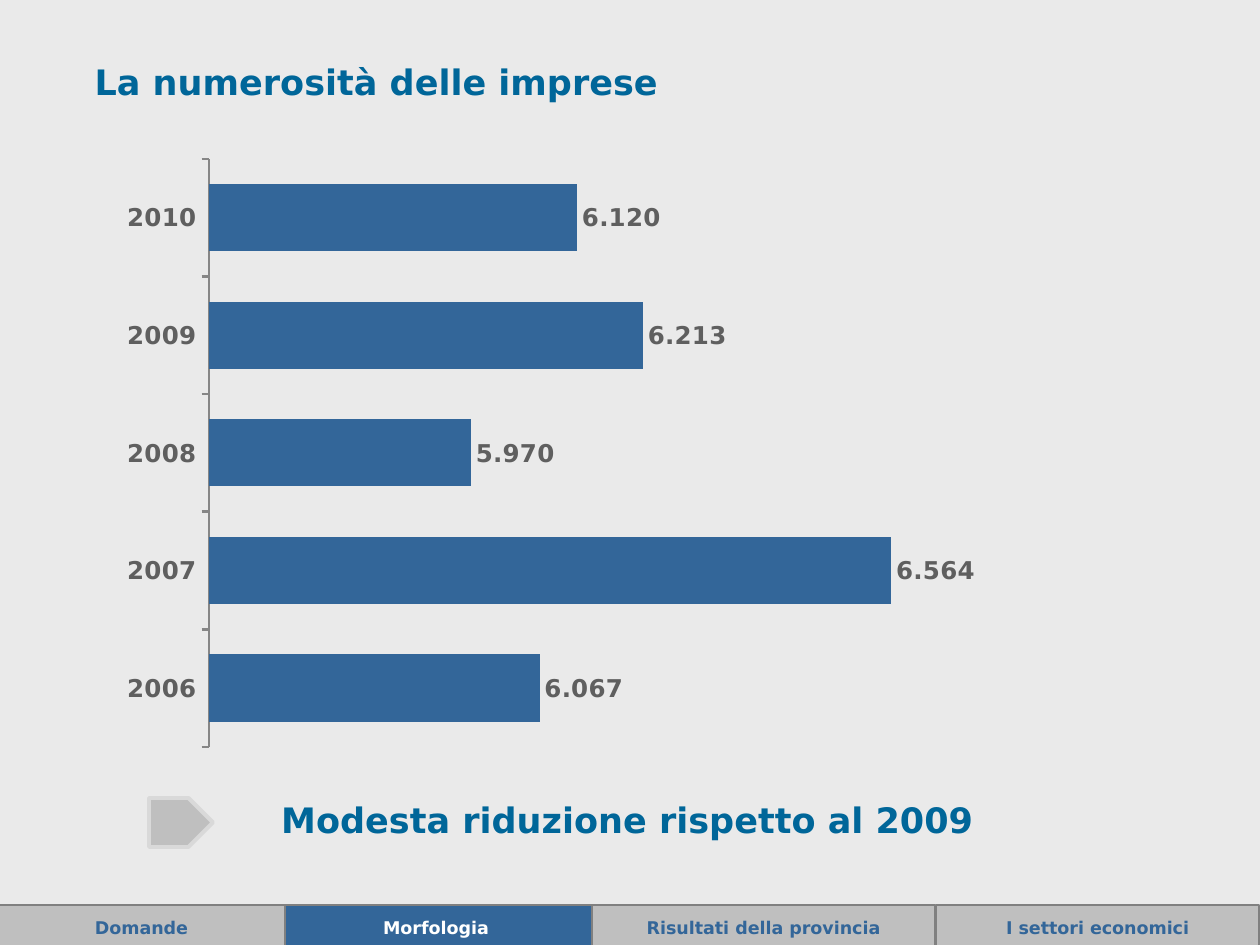
from pptx import Presentation
from pptx.chart.data import CategoryChartData
from pptx.dml.color import RGBColor
from pptx.enum.chart import XL_CHART_TYPE, XL_LABEL_POSITION, XL_TICK_MARK
from pptx.enum.shapes import MSO_SHAPE
from pptx.enum.text import MSO_ANCHOR, PP_ALIGN
from pptx.oxml import parse_xml
from pptx.oxml.ns import nsdecls
from pptx.util import Pt

BAR = XL_CHART_TYPE.BAR_CLUSTERED
OUT_END = XL_LABEL_POSITION.OUTSIDE_END
OUT, NONE = XL_TICK_MARK.OUTSIDE, XL_TICK_MARK.NONE
RECT, ARROW = MSO_SHAPE.RECTANGLE, MSO_SHAPE.PENTAGON
MIDDLE = MSO_ANCHOR.MIDDLE
LEFT, CENTER = PP_ALIGN.LEFT, PP_ALIGN.CENTER

THEME = {
    "font": "DejaVu Sans",
    "back": "EAEAEA", "head": "006699", "blue": "336699", "gray": "BFBFBF",
    "edge": "808080", "pale": "D9D9D9", "axis": "868686", "text": "5F5F5F",
    "white": "FFFFFF",
    "big": 20, "mid": 14, "small": 10,
}
SCALE = 914400 / 126  # EMU per px


def box(*sides):
    return [round(side * SCALE) for side in sides]


def style(font, size, color):
    font.name = THEME["font"]
    font.size = Pt(THEME[size])
    font.bold = True
    font.color.rgb = RGBColor.from_string(THEME[color])


prs = Presentation()
prs.slide_width, prs.slide_height = box(1260, 945)
slide = prs.slides.add_slide(prs.slide_layouts[5])
shapes = slide.shapes
fill = slide.background.fill
fill.solid()
fill.fore_color.rgb = RGBColor.from_string(THEME["back"])

# Title and closing message
title = shapes.title
title.left, title.top, title.width, title.height = box(82, 27, 1126, 110)
note = shapes.add_textbox(*box(227, 791, 801, 56))
for item, text, align in (
    (title, "La numerosità delle imprese", LEFT),
    (note, "Modesta riduzione rispetto al 2009", CENTER),
):
    frame = item.text_frame
    frame.text = text
    frame.word_wrap = True
    frame.vertical_anchor = MIDDLE
    frame.paragraphs[0].alignment = align
    style(frame.paragraphs[0].font, "big", "head")

# Bar chart of firms per year
data = CategoryChartData(number_format='0"."000')
data.categories = ["2006", "2007", "2008", "2009", "2010"]
data.add_series("Imprese", (6067, 6564, 5970, 6213, 6120))
wide, high = 1120, 626
chart = shapes.add_chart(BAR, *box(100, 140, wide, high), data).chart
chart.has_legend = False
chart.has_title = False
style(chart.font, "mid", "text")

years = chart.category_axis
years.major_tick_mark = OUT
years.has_major_gridlines = False
years.format.line.color.rgb = RGBColor.from_string(THEME["axis"])
years.format.line.width = Pt(1.5)
scale = chart.value_axis
scale.minimum_scale, scale.maximum_scale = 5600, 7000
scale.has_major_gridlines = False
scale.major_tick_mark = NONE
scale.visible = False

plot = chart.plots[0]
plot.gap_width = 75
plot.vary_by_categories = False
fill = plot.series[0].format.fill
fill.solid()
fill.fore_color.rgb = RGBColor.from_string(THEME["blue"])
plot.has_data_labels = True
labels = plot.data_labels
labels.show_value = True
labels.position = OUT_END
labels.number_format = '0"."000'
labels.number_format_is_linked = False
style(labels.font, "mid", "text")

# Fixed inner plot area, as shares of the chart frame
area = chart._chartSpace.chart.plotArea
for old in area.findall("{*}layout"):
    area.remove(old)
area.insert(0, parse_xml(
    f'<c:layout {nsdecls("c")}><c:manualLayout><c:layoutTarget val="inner"/>'
    '<c:xMode val="edge"/><c:yMode val="edge"/>'
    f'<c:x val="{109 / wide:.4f}"/><c:y val="{19 / high:.4f}"/>'
    f'<c:w val="{991 / wide:.4f}"/><c:h val="{588 / high:.4f}"/>'
    '</c:manualLayout></c:layout>'))

# Arrow and bottom tabs
parts = (
    (ARROW, (149, 798, 64, 49), "", "gray", "pale", 2.25, "blue"),
    (RECT, (280, 905, 312, 45), "Morfologia", "blue", "edge", 0.75, "white"),
    (RECT, (592, 905, 343, 45), "Risultati della provincia", "gray", "edge", 0.75, "blue"),
    (RECT, (936, 905, 323, 45), "I settori economici", "gray", "edge", 0.75, "blue"),
    (RECT, (-2, 905, 287, 45), "Domande", "gray", "edge", 0.75, "blue"),
)
for kind, sides, text, back, edge, width, color in parts:
    part = shapes.add_shape(kind, *box(*sides))
    part.shadow.inherit = False
    part.fill.solid()
    part.fill.fore_color.rgb = RGBColor.from_string(THEME[back])
    part.line.color.rgb = RGBColor.from_string(THEME[edge])
    part.line.width = Pt(width)
    if text:
        frame = part.text_frame
        frame.text = text
        frame.word_wrap = False
        frame.vertical_anchor = MIDDLE
        frame.paragraphs[0].alignment = CENTER
        style(frame.paragraphs[0].font, "small", color)

prs.save("out.pptx")
